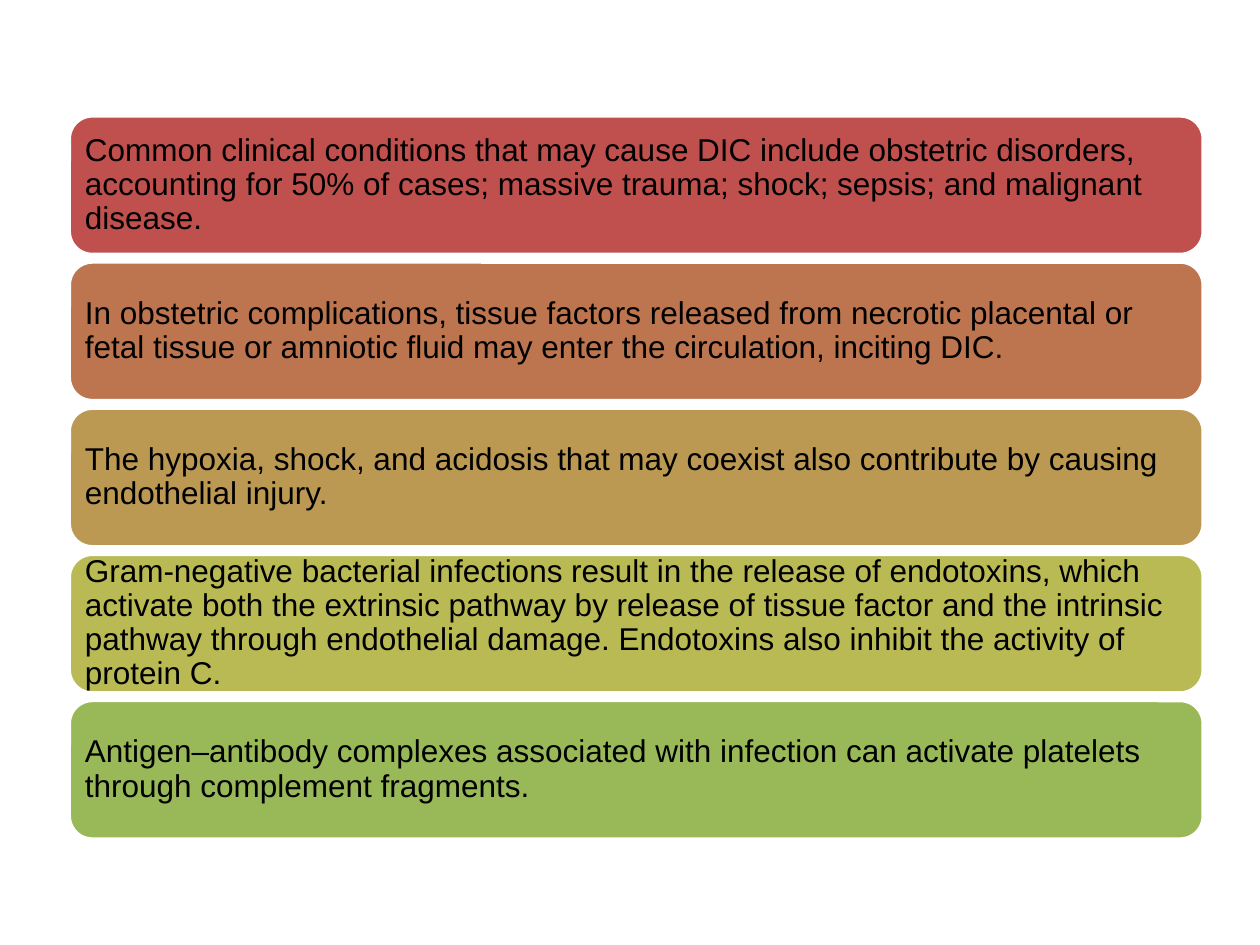
"""Build a slide of five stacked panels on the causes of DIC."""
from pptx import Presentation
from pptx.dml.color import RGBColor
from pptx.enum.shapes import MSO_SHAPE
from pptx.enum.text import MSO_ANCHOR, PP_ALIGN
from pptx.util import Inches, Pt

COLORS = {
    "red": "BF504D",
    "rust": "BD754F",
    "ochre": "BB9952",
    "olive": "BABA55",
    "green": "99B958",
    "outline": "FFFFFF",
    "text": "000000",
}
CAUSES = [
    ("red", "Common clinical conditions that may cause DIC include obstetric disorders, "
            "accounting for 50% of cases; massive trauma; shock; sepsis; and malignant disease."),
    ("rust", "In obstetric complications, tissue factors released from necrotic placental or "
             "fetal tissue or amniotic fluid may enter the circulation, inciting DIC."),
    ("ochre", "The hypoxia, shock, and acidosis that may coexist also contribute by causing "
              "endothelial injury."),
    ("olive", "Gram-negative bacterial infections result in the release of endotoxins, which "
              "activate both the extrinsic pathway by release of tissue factor and the intrinsic "
              "pathway through endothelial damage. Endotoxins also inhibit the activity of "
              "protein C."),
    ("green", "Antigen–antibody complexes associated with infection can activate platelets "
              "through complement fragments."),
]
LEFT, TOP, WIDTH, HEIGHT, PITCH = 0.55, 0.92, 9, 1.1, 1.16

presentation = Presentation()
presentation.slide_width = Inches(10)
presentation.slide_height = Inches(7.5)
slide = presentation.slides.add_slide(presentation.slide_layouts[6])

for index, (color, cause) in enumerate(CAUSES):
    panel = slide.shapes.add_shape(
        MSO_SHAPE.ROUNDED_RECTANGLE,
        Inches(LEFT), Inches(TOP + index * PITCH), Inches(WIDTH), Inches(HEIGHT),
    )
    panel.name = f"Cause {index + 1}"
    panel.shadow.inherit = False
    panel.fill.solid()
    panel.fill.fore_color.rgb = RGBColor.from_string(COLORS[color])
    panel.line.color.rgb = RGBColor.from_string(COLORS["outline"])
    panel.line.width = Pt(2)

    frame = panel.text_frame
    frame.word_wrap = True
    frame.vertical_anchor = MSO_ANCHOR.MIDDLE
    frame.margin_left = frame.margin_right = Inches(0.07)
    frame.margin_top = frame.margin_bottom = Inches(0.07)

    paragraph = frame.paragraphs[0]
    paragraph.alignment = PP_ALIGN.LEFT
    paragraph.line_spacing = 0.9
    run = paragraph.add_run()
    run.text = cause
    run.font.name = "Arial"
    run.font.size = Pt(18)
    run.font.color.rgb = RGBColor.from_string(COLORS["text"])

presentation.save("out.pptx")
